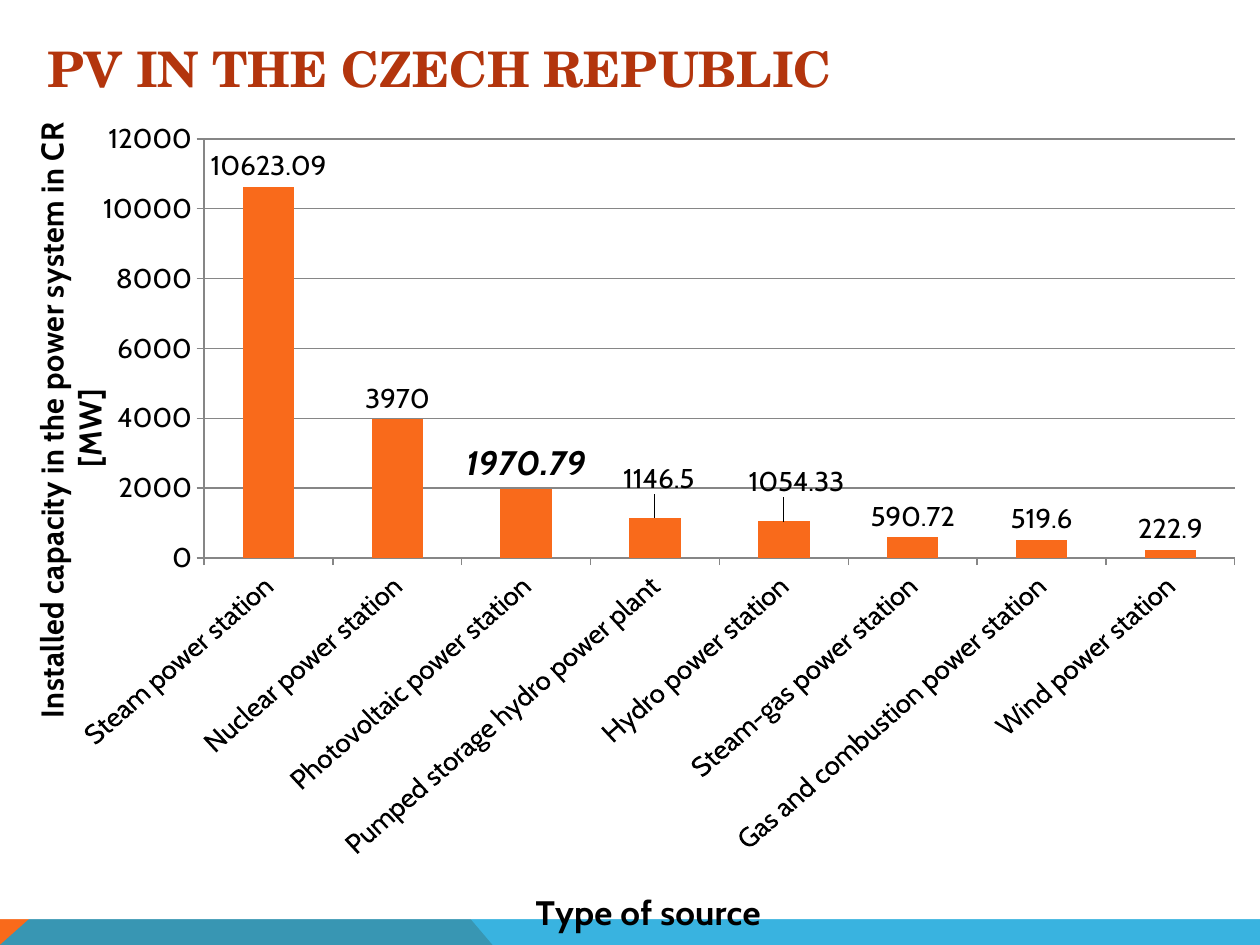
import pptx
import pptx.util
import pptx.chart.data
import pptx.dml.color
import pptx.enum.chart
import pptx.enum.text
import pptx.oxml
import pptx.oxml.ns

Cm, Pt = pptx.util.Cm, pptx.util.Pt
enum = pptx.enum.chart

# Content
HEAD = "PV IN THE CZECH REPUBLIC"
X_NAME = "Type of source"
Y_NAME = "Installed capacity in the power system in CR [MW]"
DATA = [
    ("Steam power station", 10623.09),
    ("Nuclear power station", 3970),
    ("Photovoltaic power station", 1970.79),
    ("Pumped storage hydro power plant", 1146.5),
    ("Hydro power station", 1054.33),
    ("Steam-gas power station", 590.72),
    ("Gas and combustion power station", 519.6),
    ("Wind power station", 222.9),
]
KEY = 2  # the emphasised bar
SHIFT = {3: (0.003, -0.023), 4: (0.01, -0.023)}  # labels lifted off the grid line

THEME = {
    "head": "TeX Gyre Schola", "body": "Cabin",
    "red": "B3350D", "orange": "F96A1B", "blue": "08A1D9",
    "ink": "000000", "grid": "868686", "paper": "FFFFFF",
    "title": 28, "x": 20, "y": 18, "key": 20, "label": 16,
}

# Page frame in cm
WIDE, HIGH = 25.4, 19.05
TOP, LEAN = 14.02, 5.66
WEDGES = [
    ("orange", 100, [(0, HIGH), (0, TOP), (LEAN, TOP), (9.93, HIGH)]),
    ("blue", 80, [(0, HIGH), (LEAN, TOP), (WIDE, TOP), (WIDE, HIGH)]),
]


def tint(name):
    return pptx.dml.color.RGBColor.from_string(THEME[name])


def style(font, size="label", color="ink", face="body", bold=False, italic=False):
    font.size, font.name = Pt(THEME[size]), THEME[face]
    font.bold, font.italic = bold, italic
    font.color.rgb = tint(color)


def write(frame, text, **form):
    frame.text = text
    style(frame.paragraphs[0].runs[0].font, **form)


def parse(xml):
    spaces = pptx.oxml.ns.nsdecls("a", "c")
    return pptx.oxml.parse_xml(xml.replace(">", f" {spaces}>", 1))


def place(owner, spot, inner=False, mode=None, **sizes):
    """Give a chart part a manual layout at child index spot."""
    for old in owner.xpath("c:layout"):
        owner.remove(old)
    body = '<c:layoutTarget val="inner"/>' if inner else ""
    if mode:
        body += f'<c:xMode val="{mode}"/><c:yMode val="{mode}"/>'
    body += "".join(f'<c:{k} val="{v}"/>' for k, v in sizes.items())
    owner.insert(spot, parse(
        f"<c:layout><c:manualLayout>{body}</c:manualLayout></c:layout>"))


def add_wedge(slide, color, alpha, dots):
    dots = [(Cm(x), Cm(y)) for x, y in dots]
    pen = slide.shapes.build_freeform(*dots[0])
    pen.add_line_segments(dots[1:], close=True)
    shape = pen.convert_to_shape()
    shape.shadow.inherit = False
    shape.line.fill.background()
    shape.fill.solid()
    shape.fill.fore_color.rgb = tint(color)
    if alpha < 100:
        fill = shape.element.xpath("p:spPr/a:solidFill/a:srgbClr")[0]
        fill.append(parse(f'<a:alpha val="{alpha * 1000}"></a:alpha>'))


def add_title(slide):
    title = slide.shapes.title
    title.left, title.top = Cm(0.71), Cm(0)
    title.width, title.height = Cm(24), Cm(2.72)
    frame = title.text_frame
    frame.vertical_anchor = pptx.enum.text.MSO_ANCHOR.MIDDLE
    write(frame, HEAD, size="title", color="red", face="head", bold=True)
    frame.paragraphs[0].alignment = pptx.enum.text.PP_ALIGN.LEFT
    # Bring it in front of the wedges, and outline its letters
    node = title.element
    node.getparent().append(node)
    node.xpath(".//a:rPr")[0].insert(0, parse(
        f'<a:ln w="{Pt(0.75)}"><a:solidFill><a:srgbClr val="{THEME["red"]}"/>'
        "</a:solidFill></a:ln>"))


def set_axis(axis, name, size, x, y):
    axis.major_tick_mark = enum.XL_TICK_MARK.OUTSIDE
    axis.minor_tick_mark = enum.XL_TICK_MARK.NONE
    axis.format.line.color.rgb = tint("grid")
    style(axis.tick_labels.font)
    title = axis.axis_title
    write(title.text_frame, name, size=size, bold=True)
    place(title.element, 1, mode="edge", x=x, y=y)
    return title.element.xpath("c:tx/c:rich/a:bodyPr")[0]


def add_chart(slide):
    data = pptx.chart.data.CategoryChartData()
    data.categories = [name for name, _ in DATA]
    data.add_series("Series 1", [value for _, value in DATA])
    chart = slide.shapes.add_chart(
        enum.XL_CHART_TYPE.COLUMN_CLUSTERED,
        Cm(0), Cm(2.13), Cm(WIDE), Cm(16.92), data).chart
    chart.has_legend = chart.has_title = False
    style(chart.font)
    root = chart.element
    root.xpath("c:txPr")[0].addprevious(parse(
        f'<c:spPr><a:solidFill><a:srgbClr val="{THEME["paper"]}"/></a:solidFill>'
        "<a:ln><a:noFill/></a:ln></c:spPr>"))
    place(root.xpath("c:chart/c:plotArea")[0], 0, inner=True, mode="edge",
          x=0.162, y=0.041, w=0.818, h=0.515)

    # Axes
    set_axis(chart.category_axis, X_NAME, "x", 0.42, 0.955)
    root.xpath(".//c:catAx/c:txPr/a:bodyPr")[0].set("rot", str(-42 * 60000))
    axis = chart.value_axis
    turn = set_axis(axis, Y_NAME, "y", 0.019, 0.036)
    turn.set("rot", str(-90 * 60000))
    turn.set("vert", "horz")
    axis.minimum_scale, axis.maximum_scale, axis.major_unit = 0, 12000, 2000
    axis.has_major_gridlines = True
    axis.major_gridlines.format.line.color.rgb = tint("grid")

    # Bars and their labels
    plot = chart.plots[0]
    plot.gap_width, plot.vary_by_categories = 150, False
    bars = plot.series[0]
    bars.format.fill.solid()
    bars.format.fill.fore_color.rgb = tint("orange")
    labels = bars.data_labels
    labels.show_value = True
    labels.position = enum.XL_LABEL_POSITION.OUTSIDE_END
    style(labels.font)
    for spot in (KEY, *SHIFT):
        label = bars.points[spot].data_label
        strong = spot == KEY
        style(label.font, size="key" if strong else "label",
              bold=strong, italic=strong)
        label.position = enum.XL_LABEL_POSITION.OUTSIDE_END
    for spot, (x, y) in SHIFT.items():
        node = root.xpath(f".//c:dLbl[c:idx/@val='{spot}']")[0]
        place(node, 1, x=x, y=y)

    # No leader lines
    for node in root.xpath(".//c:showLeaderLines"):
        node.getparent().remove(node)
    root.xpath(".//c:ser/c:dLbls")[0].append(parse(
        '<c:extLst><c:ext uri="{CE6537A1-D6FC-4f65-9D91-7224C49458BB}" '
        'xmlns:c15="http://schemas.microsoft.com/office/drawing/2012/chart">'
        '<c15:showLeaderLines val="0"/></c:ext></c:extLst>'))


def main():
    deck = pptx.Presentation()
    deck.slide_width, deck.slide_height = Cm(WIDE), Cm(HIGH)
    slide = deck.slides.add_slide(deck.slide_layouts[5])
    for wedge in WEDGES:
        add_wedge(slide, *wedge)
    add_title(slide)
    add_chart(slide)
    deck.save("out.pptx")


if __name__ == "__main__":
    main()
